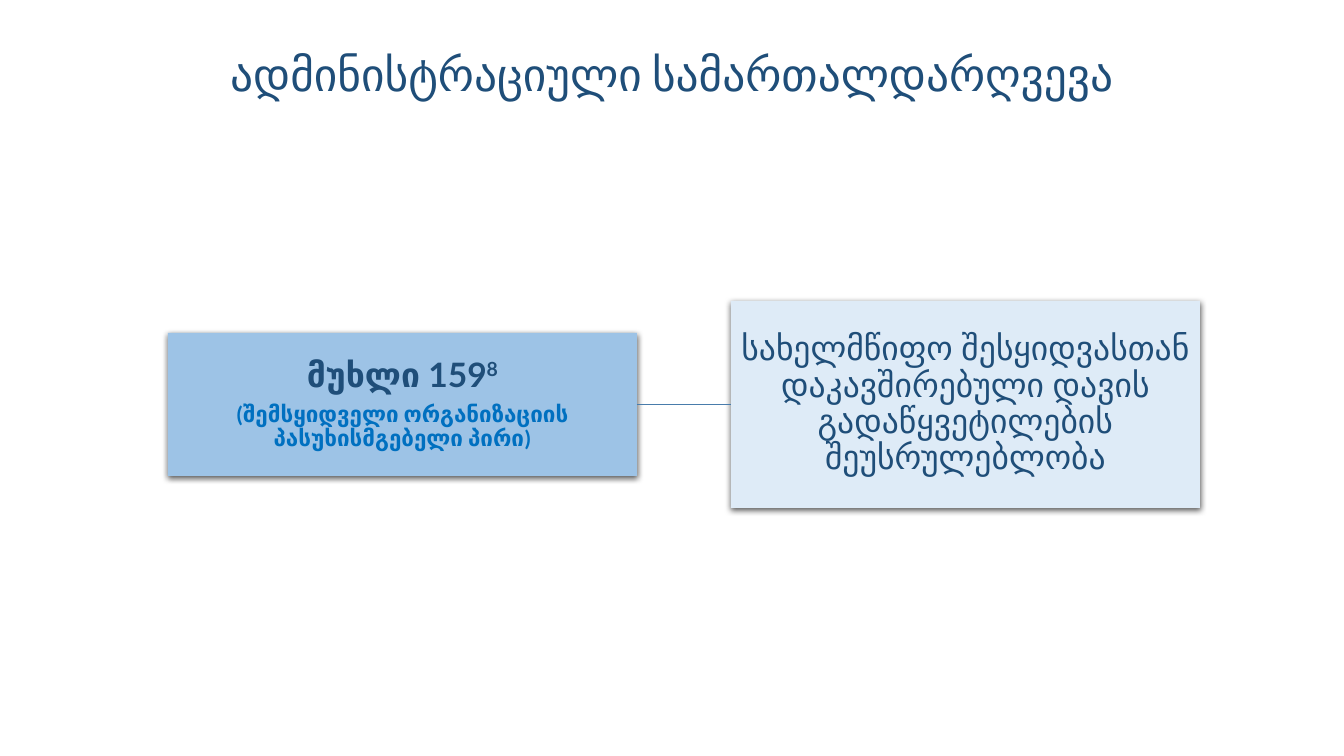
from lxml import etree
from pptx import Presentation
from pptx import util as u
from pptx.dml.color import RGBColor
from pptx.enum import shapes, text
from pptx.oxml import parse_xml
from pptx.oxml.ns import nsdecls, qn

PX = 914400 / 100.8
THEME = {
    "navy": "1F4E79", "blue": "0070C0", "line": "497CAB",
    "article": "9DC3E6", "offence": "DEEBF7",
    "title_size": 32.4, "main_size": 24, "note_size": 16,
    "title_font": "Calibri", "main_font": "Lato",
}
SHADOW = (f'<a:effectLst {nsdecls("a")}><a:outerShdw blurRad="57150" dist="19050" '
          'dir="5400000" algn="ctr" rotWithShape="0"><a:srgbClr val="000000">'
          '<a:alpha val="63000"/></a:srgbClr></a:outerShdw></a:effectLst>')


def px(n):
    return u.Emu(round(n * PX))


def add_run(p, words, font, size, color, bold=False, raised=False):
    r = p.add_run()
    r.text = words
    for name, value in {"name": font, "size": u.Pt(size), "bold": bold}.items():
        setattr(r.font, name, value)
    r.font.color.rgb = RGBColor.from_string(color)
    if raised:
        r.font._element.set("baseline", "30000")


prs = Presentation()
prs.slide_width, prs.slide_height = px(1344), px(756)
s = prs.slides.add_slide(prs.slide_layouts[5])

# Title
title = s.shapes.title
title.left, title.top, title.width, title.height = px(168), px(30), px(1008), px(170)
tf = title.text_frame
for name, value in {"word_wrap": True, "auto_size": text.MSO_AUTO_SIZE.NONE,
                    "vertical_anchor": text.MSO_ANCHOR.TOP, "margin_top": px(22)}.items():
    setattr(tf, name, value)
p = tf.paragraphs[0]
p.alignment, p.line_spacing = text.PP_ALIGN.CENTER, 0.9
add_run(p, "ადმინისტრაციული სამართალდარღვევა",
        THEME["title_font"], THEME["title_size"], THEME["navy"])

# Boxes: left, top, height, fill, paragraphs of runs
main = (THEME["main_font"], THEME["main_size"], THEME["navy"])
note = (THEME["title_font"], THEME["note_size"], THEME["blue"])
BOXES = [
    (168, 333, 143, THEME["article"], [
        [("მუხლი 159", *main, True), ("8", *main, True, True)],
        [("(შემსყიდველი ორგანიზაციის პასუხისმგებელი პირი)", *note, True)],
    ]),
    (731, 301, 207, THEME["offence"], [
        [("სახელმწიფო შესყიდვასთან დაკავშირებული დავის "
          "გადაწყვეტილების შეუსრულებლობა", *main)],
    ]),
]
boxes = []
for left, top, height, fill, paragraphs in BOXES:
    sp = s.shapes.add_shape(shapes.MSO_SHAPE.RECTANGLE,
                            px(left), px(top), px(469), px(height))
    sp.fill.solid()
    sp.fill.fore_color.rgb = RGBColor.from_string(fill)
    sp.line.fill.background()
    sp._element.spPr.append(parse_xml(SHADOW))
    tf = sp.text_frame
    tf.word_wrap = True
    tf.vertical_anchor = text.MSO_ANCHOR.MIDDLE
    for side in ("left", "top", "right", "bottom"):
        setattr(tf, f"margin_{side}", px(2))
    for i, runs in enumerate(paragraphs):
        p = tf.add_paragraph() if i else tf.paragraphs[0]
        p.alignment, p.line_spacing = text.PP_ALIGN.CENTER, 0.9
        p.space_before = u.Pt(6 if i else 0)
        for run in runs:
            add_run(p, *run)
    boxes.append(sp)

# Line from the article to the offence
link = s.shapes.add_connector(shapes.MSO_CONNECTOR.STRAIGHT, 0, 0, 0, 0)
link.begin_connect(boxes[0], 3)
link.end_connect(boxes[1], 1)
link.line.color.rgb = RGBColor.from_string(THEME["line"])
link.line.width = u.Pt(1)
etree.SubElement(link._element.spPr, qn("a:effectLst"))

prs.save("out.pptx")
